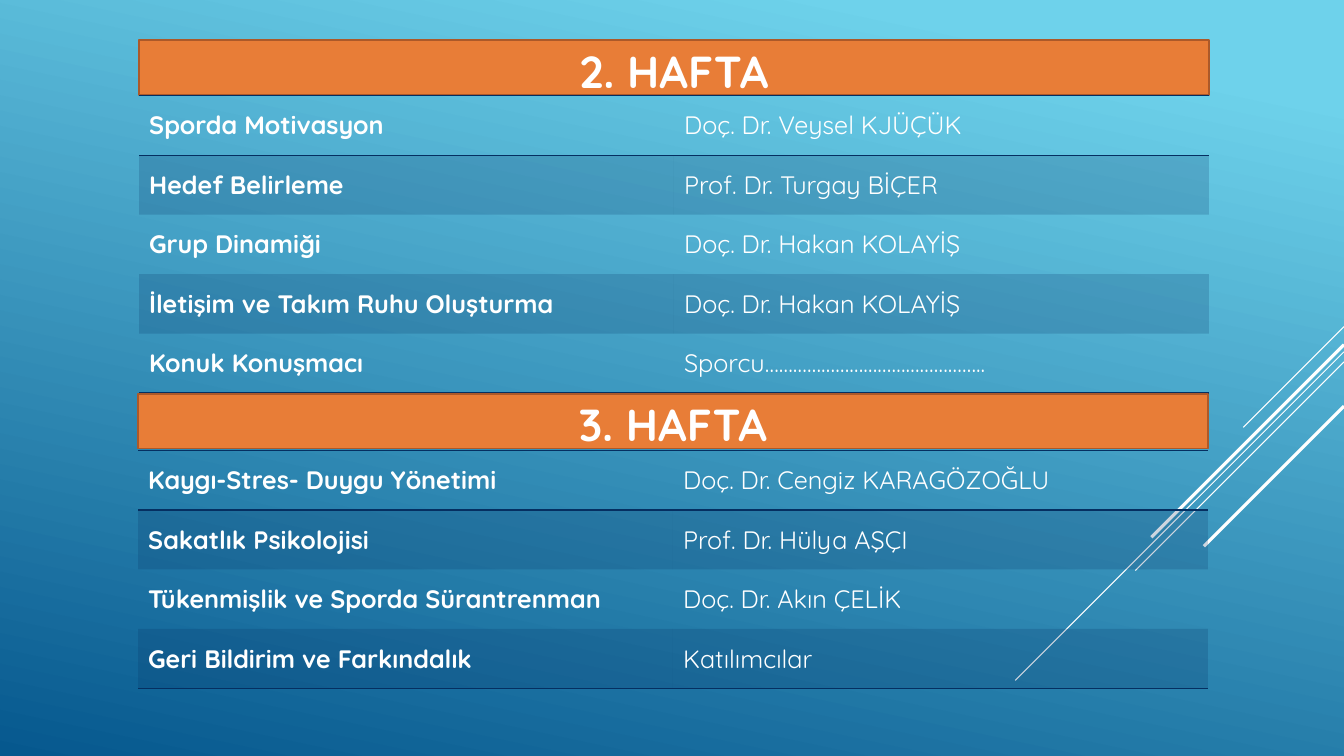
from dataclasses import dataclass

from pptx import Presentation
from pptx import util as u
from pptx.dml.color import RGBColor
from pptx.enum import shapes, text
from pptx.oxml import parse_xml
from pptx.oxml.ns import nsdecls, qn


@dataclass(frozen=True)
class Theme:
    font: str = "Quicksand"
    white: str = "FFFFFF"
    navy: str = "052F61"
    orange: str = "E87D37"
    rust: str = "AC5929"
    sky: str = "6ED2EB"
    deep: str = "06588E"
    heading_size: int = 32
    body_size: int = 18
    band_alpha: int = 20


THEME = Theme()
WIDTH, HEIGHT = 13.33, 7.5
ROW_HEIGHT = 0.59
HEADING_HEIGHT = 0.54
PLAIN_TABLE_STYLE = "{2D5ABB26-0587-4C30-8999-92F81FD0307C}"

# Each week: heading, left, top, top of its table, rows
WEEKS = [
    ("2. HAFTA", 1.38, 0.4, 0.95, [
        ("Sporda Motivasyon", "Doç. Dr. Veysel KJÜÇÜK"),
        ("Hedef Belirleme", "Prof. Dr. Turgay BİÇER"),
        ("Grup Dinamiği", "Doç. Dr. Hakan KOLAYİŞ"),
        ("İletişim ve Takım Ruhu Oluşturma", "Doç. Dr. Hakan KOLAYİŞ"),
        ("Konuk Konuşmacı", "Sporcu……………………………………….."),
    ]),
    ("3. HAFTA", 1.37, 3.91, 4.47, [
        ("Kaygı-Stres- Duygu Yönetimi", "Doç. Dr. Cengiz KARAGÖZOĞLU"),
        ("Sakatlık Psikolojisi", "Prof. Dr. Hülya AŞÇI"),
        ("Tükenmişlik ve Sporda Sürantrenman", "Doç. Dr. Akın ÇELİK"),
        ("Geri Bildirim ve Farkındalık", "Katılımcılar"),
    ]),
]
WEEK_WIDTH = 10.61

# Diagonals leave the right edge at a height and fall by their reach: y, reach, points
DIAGONALS = [
    (3.24, 1.0, 0.75),
    (3.49, 3.26, 0.75),
    (3.59, 2.07, 0.75),
    (3.42, 1.91, 2.25),
    (4.03, 1.39, 2.25),
]


def color(value):
    return RGBColor.from_string(value)


def paint_background(slide):
    fill = slide.background.fill
    fill.gradient()
    fill.gradient_angle = 360 - 102
    stops = zip(fill.gradient_stops, (THEME.sky, THEME.deep), (0.1, 1))
    for stop, value, position in stops:
        stop.color.rgb = color(value)
        stop.position = position


def add_diagonals(slide, right):
    for top, reach, points in DIAGONALS:
        line = slide.shapes.add_connector(
            shapes.MSO_CONNECTOR.STRAIGHT, u.Inches(right), u.Inches(top),
            u.Inches(right - reach), u.Inches(top + reach))
        line.line.color.rgb = color(THEME.white)
        line.line.width = u.Pt(points)
        line._element.spPr.append(parse_xml(f"<a:effectLst {nsdecls('a')}/>"))


def write(paragraph, words, size, bold):
    run = paragraph.add_run()
    run.text = words
    run.font.name = THEME.font
    run.font.size = u.Pt(size)
    run.font.bold = bold
    run.font.color.rgb = color(THEME.white)


def add_heading(slide, words, left, top, width):
    shape = slide.shapes.add_shape(
        shapes.MSO_SHAPE.RECTANGLE, u.Inches(left), u.Inches(top),
        u.Inches(width), u.Inches(HEADING_HEIGHT))
    shape.shadow.inherit = False
    shape.fill.solid()
    shape.fill.fore_color.rgb = color(THEME.orange)
    shape.line.color.rgb = color(THEME.rust)
    shape.line.width = u.Pt(1.25)
    frame = shape.text_frame
    frame.word_wrap = True
    frame.vertical_anchor = text.MSO_ANCHOR.MIDDLE
    paragraph = frame.paragraphs[0]
    paragraph.alignment = text.PP_ALIGN.CENTER
    paragraph.line_spacing = 1.1
    write(paragraph, words, THEME.heading_size, True)


def fill_cell(cell, banded):
    if not banded:
        cell.fill.background()
        return
    cell.fill.solid()
    cell.fill.fore_color.rgb = color(THEME.navy)
    tint = cell._tc.tcPr.find(".//" + qn("a:srgbClr"))
    tint.append(parse_xml(
        f'<a:alpha {nsdecls("a")} val="{THEME.band_alpha * 1000}"/>'))


def rule_cell(cell, sides):
    """Draw navy rules on the given sides, listed in schema order (T, B)."""
    for index, side in enumerate(sides):
        cell._tc.tcPr.insert(index, parse_xml(
            f'<a:ln{side} {nsdecls("a")} w="{u.Pt(1)}"><a:solidFill>'
            f'<a:srgbClr val="{THEME.navy}"/></a:solidFill></a:ln{side}>'))


def add_schedule(slide, rows, left, top, width):
    frame = slide.shapes.add_table(
        len(rows), 2, u.Inches(left), u.Inches(top),
        u.Inches(width), u.Inches(ROW_HEIGHT * len(rows)))
    table = frame.table
    table.first_row = table.horz_banding = False
    frame._element.find(".//" + qn("a:tableStyleId")).text = PLAIN_TABLE_STYLE
    last = len(rows) - 1
    for row, words in enumerate(rows):
        sides = {0: "TB", last: "B"}.get(row, "")
        for column, label in enumerate(words):
            cell = table.cell(row, column)
            cell.vertical_anchor = text.MSO_ANCHOR.MIDDLE
            cell.margin_top = cell.margin_bottom = 0
            paragraph = cell.text_frame.paragraphs[0]
            paragraph.space_before = paragraph.space_after = u.Pt(6)
            write(paragraph, label, THEME.body_size, column == 0)
            fill_cell(cell, banded=row % 2 == 1)
            rule_cell(cell, sides)


def build_weeks_slide(presentation):
    slide = presentation.slides.add_slide(presentation.slide_layouts[6])
    paint_background(slide)
    add_diagonals(slide, WIDTH)
    for heading, left, top, table_top, rows in WEEKS:
        add_heading(slide, heading, left, top, WEEK_WIDTH)
        add_schedule(slide, rows, left, table_top, WEEK_WIDTH)


def main():
    presentation = Presentation()
    presentation.slide_width = u.Inches(WIDTH)
    presentation.slide_height = u.Inches(HEIGHT)
    build_weeks_slide(presentation)
    presentation.save("out.pptx")


if __name__ == "__main__":
    main()
